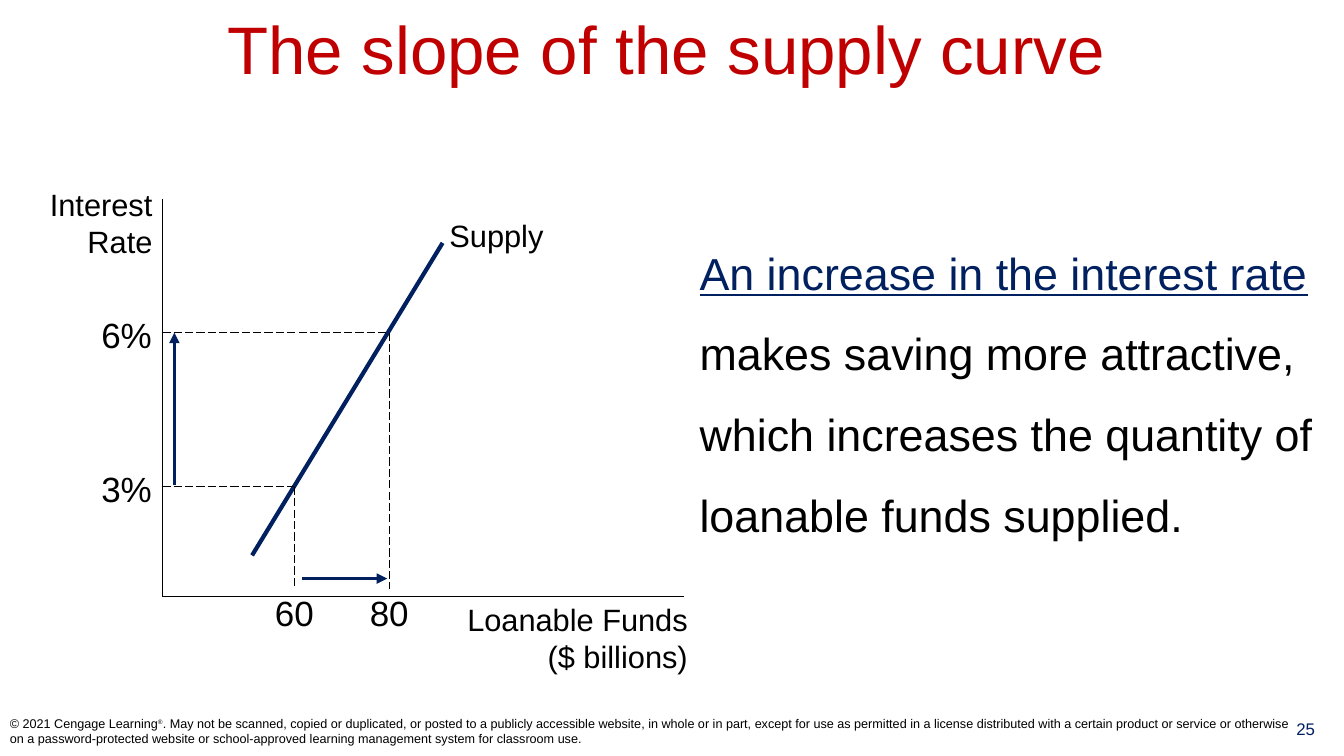
import pptx
import pptx.util
import pptx.dml.color
import pptx.enum.dml
import pptx.enum.shapes
import pptx.enum.text
import pptx.oxml.ns
import lxml.etree

Inches = pptx.util.Inches
RGBColor = pptx.dml.color.RGBColor
Align = pptx.enum.text.PP_ALIGN
Anchor = pptx.enum.text.MSO_ANCHOR

RED = RGBColor(0xC0, 0x00, 0x00)
NAVY = RGBColor(0x00, 0x20, 0x60)
BLACK = RGBColor(0x00, 0x00, 0x00)

AXIS_LEFT, AXIS_TOP, AXIS_RIGHT, AXIS_BOTTOM = 1.61, 1.97, 6.78, 5.92
GUIDE_BOTTOM = 5.84
TICK_WIDTH, TICK_HEIGHT = 0.67, 0.52
POINTS = [("60", 2.92, "3%", 4.83), ("80", 3.86, "6%", 3.3)]

COPYRIGHT = [
    ("© 2021 Cengage Learning", 9),
    ("®", 8),
    (". May not be scanned, copied or duplicated, or posted to a publicly accessible "
     "website, in whole or in part, except for use as permitted in a license distributed "
     "with a certain product or service or otherwise on a password-protected website or "
     "school-approved learning management system for classroom use.", 9),
]


def add_text(page, left, top, width, height, text, size, color=BLACK,
             align=Align.LEFT, anchor=Anchor.TOP, side_inset=0.1):
    box = page.shapes.add_textbox(Inches(left), Inches(top), Inches(width), Inches(height))
    frame = box.text_frame
    frame.word_wrap = True
    frame.vertical_anchor = anchor
    frame.margin_left = frame.margin_right = Inches(side_inset)
    para = frame.paragraphs[0]
    para.text = text
    para.alignment = align
    para.font.name = "Arial"
    para.font.size = pptx.util.Pt(size)
    para.font.color.rgb = color
    return para


def add_tick(page, left, top, text):
    add_text(page, left, top, TICK_WIDTH, TICK_HEIGHT, text, 25,
             align=Align.CENTER, side_inset=0)


def add_line(page, start, end, color=BLACK, width=0.75, dashed=False, arrow=False):
    line = page.shapes.add_connector(
        pptx.enum.shapes.MSO_CONNECTOR.STRAIGHT,
        Inches(start[0]), Inches(start[1]), Inches(end[0]), Inches(end[1]))
    line.line.color.rgb = color
    line.line.width = pptx.util.Pt(width)
    if dashed:
        line.line.dash_style = pptx.enum.dml.MSO_LINE.LONG_DASH
    qn = pptx.oxml.ns.qn
    if arrow:
        outline = line.line._get_or_add_ln()
        lxml.etree.SubElement(outline, qn("a:tailEnd"), type="triangle")
    lxml.etree.SubElement(line._element.spPr, qn("a:effectLst"))


def add_explanation(page):
    para = add_text(page, 6.84, 2.12, 6.3, 3.81, "", 32)
    para.line_spacing = 1.5
    para.space_after = pptx.util.Pt(6)
    cause = para.add_run()
    cause.text = "An increase in the interest rate"
    cause.font.underline = True
    cause.font.color.rgb = NAVY
    effect = para.add_run()
    effect.text = (" makes saving more attractive, which increases the quantity of "
                   "loanable funds supplied.")


def add_copyright(page):
    para = add_text(page, 0, 7, 12.92, 0.5, "", 9, anchor=Anchor.MIDDLE)
    for text, size in COPYRIGHT:
        span = para.add_run()
        span.text = text
        span.font.size = pptx.util.Pt(size)
        if text == "®":
            span.font._element.set("baseline", "30000")


def add_graph(page):
    origin = (AXIS_LEFT, AXIS_BOTTOM)
    add_line(page, (AXIS_LEFT, AXIS_TOP), origin)
    add_line(page, origin, (AXIS_RIGHT, AXIS_BOTTOM))
    add_text(page, 0.1, 1.79, 1.51, 0.83, "Interest\vRate", 22, align=Align.RIGHT)
    add_text(page, 4.19, 5.91, 2.73, 0.83, "Loanable Funds ($ billions)", 22,
             align=Align.RIGHT)
    add_line(page, (2.5, 5.51), (4.39, 2.41), NAVY, 3)
    add_text(page, 4.36, 2.1, 1.27, 0.47, "Supply", 22)
    for quantity, x, rate, y in POINTS:
        add_line(page, (AXIS_LEFT, y), (x, y), dashed=True)
        add_line(page, (x, y), (x, GUIDE_BOTTOM), dashed=True)
        add_tick(page, x - TICK_WIDTH / 2, 5.82, quantity)
        add_tick(page, 0.92, y - 0.24, rate)
    add_line(page, (1.73, 4.81), (1.73, 3.3), NAVY, 2.5, arrow=True)
    add_line(page, (3, 5.74), (3.84, 5.74), NAVY, 2.5, arrow=True)


def main():
    deck = pptx.Presentation()
    deck.slide_width = Inches(13.33)
    deck.slide_height = Inches(7.5)
    page = deck.slides.add_slide(deck.slide_layouts[6])
    add_text(page, 0.11, 0.11, 13, 0.72, "The slope of the supply curve", 48, RED,
             Align.CENTER, Anchor.MIDDLE)
    add_text(page, 12.57, 7.08, 0.76, 0.41, "25", 12, NAVY, Align.CENTER)
    add_explanation(page)
    add_graph(page)
    add_copyright(page)
    deck.save("out.pptx")


if __name__ == "__main__":
    main()
